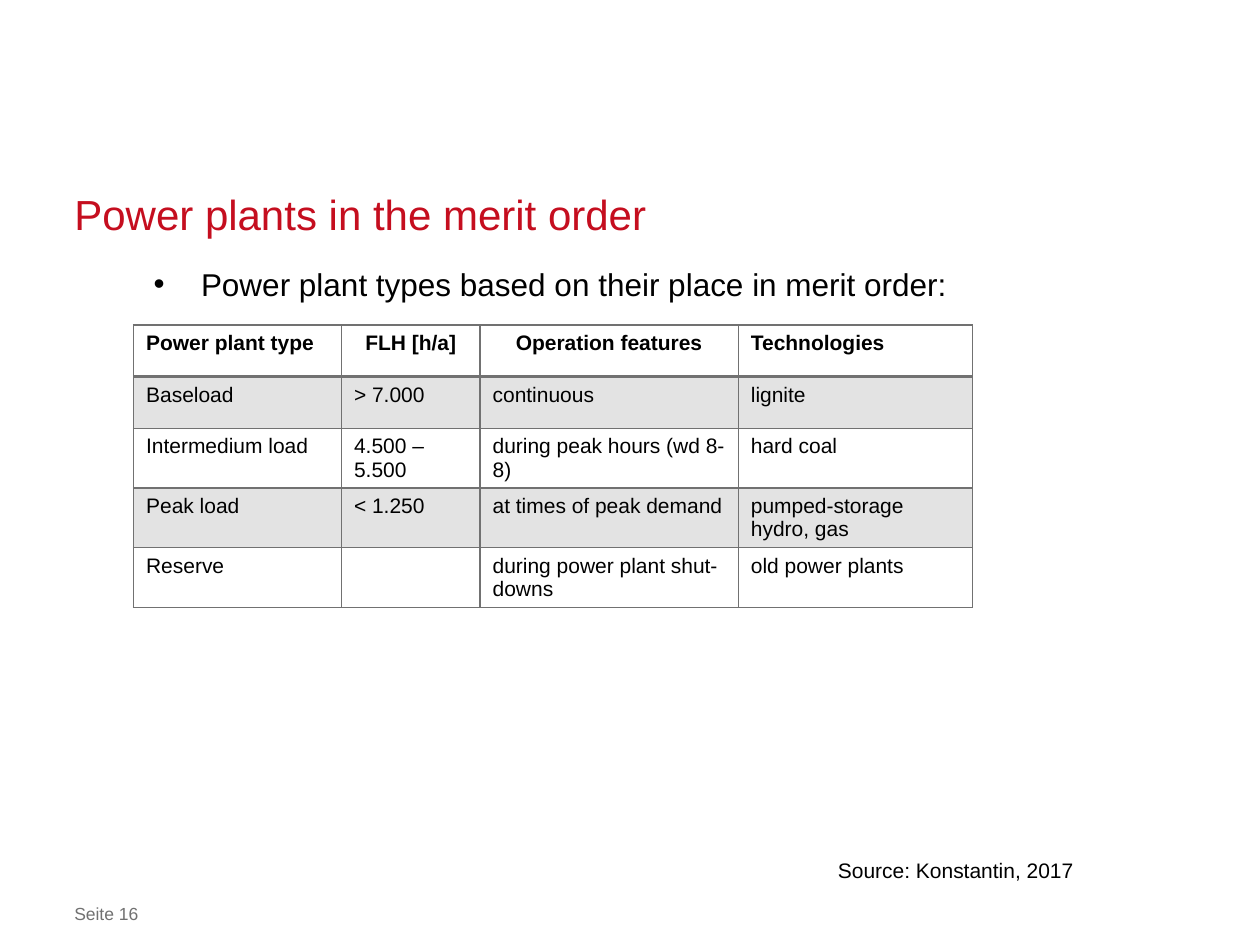
from dataclasses import dataclass

from lxml import etree
from pptx import Presentation
from pptx.dml.color import RGBColor
from pptx.enum.text import MSO_ANCHOR, PP_ALIGN
from pptx.oxml.ns import qn
from pptx.util import Inches, Pt

LEFT, CENTER, RIGHT = PP_ALIGN.LEFT, PP_ALIGN.CENTER, PP_ALIGN.RIGHT
TOP, BOTTOM = MSO_ANCHOR.TOP, MSO_ANCHOR.BOTTOM


@dataclass(frozen=True)
class Theme:
    font: str = "Arial"
    red: str = "C50E1F"
    black: str = "000000"
    gray: str = "717171"
    band: str = "E3E3E3"
    title: int = 24
    body: int = 18
    small: int = 12
    foot: int = 10


@dataclass(frozen=True)
class Column:
    head: str
    width: float
    align: PP_ALIGN
    cells: tuple[str, ...]


THEME = Theme()
ROW = 0.41
COLUMNS = (
    Column("Power plant type", 1.65, LEFT,
           ("Baseload", "Intermedium load", "Peak load", "Reserve")),
    Column("FLH [h/a]", 1.1, CENTER,
           ("> 7.000", "4.500 – 5.500", "< 1.250", "")),
    Column("Operation features", 2.05, CENTER,
           ("continuous", "during peak hours (wd 8-8)",
            "at times of peak demand", "during power plant shut-downs")),
    Column("Technologies", 1.86, LEFT,
           ("lignite", "hard coal", "pumped-storage hydro, gas",
            "old power plants")),
)


def write(frame, text: str, size: int, color: str,
          align: PP_ALIGN = LEFT, bold: bool = False) -> None:
    """Set one paragraph of text and its look."""
    frame.text = text
    para = frame.paragraphs[0]
    para.alignment = align
    for font in [para.font] + [run.font for run in para.runs]:
        font.name, font.size, font.bold = THEME.font, Pt(size), bold
        font.color.rgb = RGBColor.from_string(color)


def place(shape, left: float, top: float, width: float, height: float) -> None:
    shape.left, shape.top = Inches(left), Inches(top)
    shape.width, shape.height = Inches(width), Inches(height)


def trim(frame, anchor: MSO_ANCHOR = TOP) -> None:
    """Drop the inner margins."""
    frame.margin_left = frame.margin_right = 0
    frame.margin_top = frame.margin_bottom = 0
    frame.vertical_anchor, frame.word_wrap = anchor, True


def border(cell, side: str, width: float) -> None:
    props = cell._tc.get_or_add_tcPr()
    line = etree.SubElement(props, qn(f"a:ln{side}"), w=str(Pt(width)))
    fill = etree.SubElement(line, qn("a:solidFill"))
    etree.SubElement(fill, qn("a:srgbClr"), val=THEME.gray)


def draw_cell(cell, text: str, row: int, align: PP_ALIGN) -> None:
    write(cell.text_frame, text, THEME.small, THEME.black, align, row == 0)
    widths = {"L": 1, "R": 1, "T": 2 if row == 1 else 1,
              "B": 2 if row == 0 else 1}
    for side, width in widths.items():
        border(cell, side, width)
    if row % 2:
        cell.fill.solid()
        cell.fill.fore_color.rgb = RGBColor.from_string(THEME.band)
    else:
        cell.fill.background()


def draw_table(slide, left: float, top: float) -> None:
    count = len(COLUMNS[0].cells) + 1
    width = sum(col.width for col in COLUMNS)
    table = slide.shapes.add_table(
        count, len(COLUMNS), Inches(left), Inches(top),
        Inches(width), Inches(ROW * count)).table
    table.horz_banding = False
    for row in table.rows:
        row.height = Inches(ROW)
    for x, col in enumerate(COLUMNS):
        table.columns[x].width = Inches(col.width)
        draw_cell(table.cell(0, x), col.head, 0, col.align)
        for y, text in enumerate(col.cells, 1):
            draw_cell(table.cell(y, x), text, y, LEFT)


def main() -> None:
    deck = Presentation()
    deck.slide_width, deck.slide_height = Inches(10), Inches(7.5)
    slide = deck.slides.add_slide(deck.slide_layouts[1])
    title, body = slide.placeholders

    # Title
    place(title, 0.59, 1.51, 8.82, 0.39)
    trim(title.text_frame, BOTTOM)
    write(title.text_frame, "Power plants in the merit order",
          THEME.title, THEME.red)
    title.text_frame.paragraphs[0].line_spacing = Pt(30)

    # Lead line, without a bullet
    place(body, 1.22, 2.1, 7.4, 4.45)
    trim(body.text_frame)
    para = body.text_frame.paragraphs[0]
    props = para._p.get_or_add_pPr()
    props.set("marL", "0")
    props.set("indent", "0")
    etree.SubElement(props, qn("a:buNone"))
    write(body.text_frame,
          "Power plant types based on their place in merit order:",
          THEME.body, THEME.black)
    para.line_spacing, para.space_before = Pt(22), Pt(0)

    # Plant types
    draw_table(slide, 1.06, 2.58)

    # Source and page number
    source = slide.shapes.add_textbox(
        Inches(6.1), Inches(6.76), Inches(2.52), Inches(0.31)).text_frame
    source.word_wrap = True
    write(source, "Source: Konstantin, 2017", THEME.small, THEME.black, RIGHT)
    page = slide.shapes.add_textbox(
        Inches(0.59), Inches(7.17), Inches(7.24), Inches(0.17)).text_frame
    trim(page)
    write(page, "Seite 16", THEME.foot, THEME.gray)

    deck.save("out.pptx")


if __name__ == "__main__":
    main()
